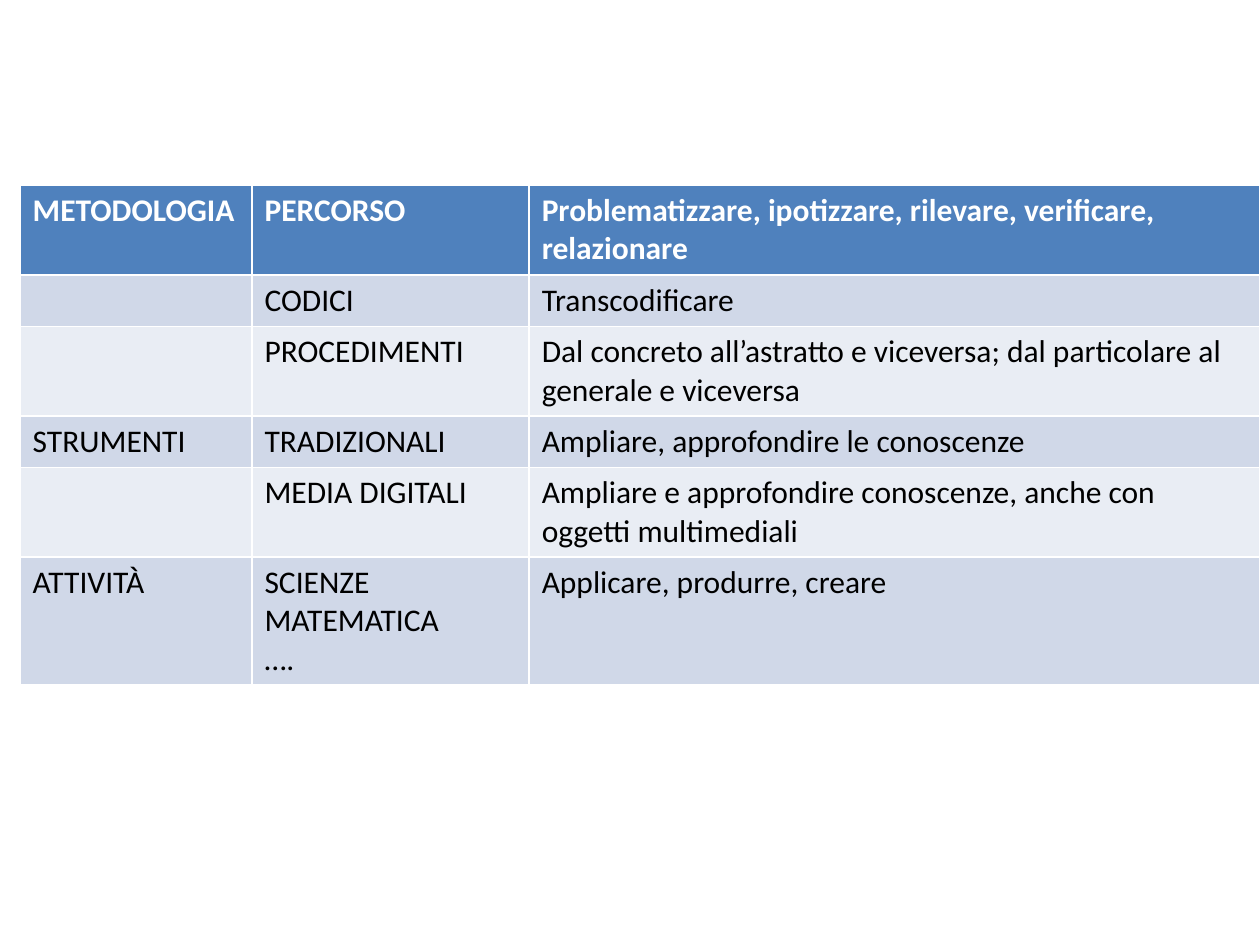
import pptx
import pptx.dml.color
import pptx.util
from pptx.util import Inches

WHITE = pptx.dml.color.RGBColor(0xFF, 0xFF, 0xFF)
BLACK = pptx.dml.color.RGBColor(0x00, 0x00, 0x00)
HEADER_BLUE = pptx.dml.color.RGBColor(0x4F, 0x81, 0xBD)
BAND_DARK = pptx.dml.color.RGBColor(0xD0, 0xD8, 0xE8)
BAND_LIGHT = pptx.dml.color.RGBColor(0xE9, 0xED, 0xF4)

COLUMN_WIDTHS = [1.84, 2.2, 5.8]
ROW_HEIGHT = 0.41
ROWS = [
    ("METODOLOGIA", "PERCORSO",
     "Problematizzare, ipotizzare, rilevare, verificare, relazionare"),
    ("", "CODICI", "Transcodificare"),
    ("", "PROCEDIMENTI",
     "Dal concreto all’astratto e viceversa; dal particolare al generale e viceversa"),
    ("STRUMENTI", "TRADIZIONALI", "Ampliare, approfondire le conoscenze"),
    ("", "MEDIA DIGITALI",
     "Ampliare e approfondire conoscenze, anche con oggetti multimediali"),
    ("ATTIVITÀ", "SCIENZE\nMATEMATICA\n….", "Applicare, produrre, creare"),
]

presentation = pptx.Presentation()
presentation.slide_width = Inches(10)
presentation.slide_height = Inches(7.5)
slide = presentation.slides.add_slide(presentation.slide_layouts[6])

# The default table style supplies the white cell borders.
table = slide.shapes.add_table(
    len(ROWS), len(COLUMN_WIDTHS), Inches(0.16), Inches(1.47),
    Inches(sum(COLUMN_WIDTHS)), Inches(ROW_HEIGHT * len(ROWS))).table
for column, width in zip(table.columns, COLUMN_WIDTHS):
    column.width = Inches(width)

for row_index, (row, texts) in enumerate(zip(table.rows, ROWS)):
    row.height = Inches(ROW_HEIGHT)
    is_header = row_index == 0
    if is_header:
        fill_color = HEADER_BLUE
    else:
        fill_color = BAND_DARK if row_index % 2 else BAND_LIGHT
    for cell, text in zip(row.cells, texts):
        cell.fill.solid()
        cell.fill.fore_color.rgb = fill_color
        cell.text_frame.text = text
        for paragraph in cell.text_frame.paragraphs:
            for run in paragraph.runs:
                run.font.name = "Calibri"
                run.font.size = pptx.util.Pt(18)
                run.font.bold = is_header
                run.font.color.rgb = WHITE if is_header else BLACK

presentation.save("out.pptx")
